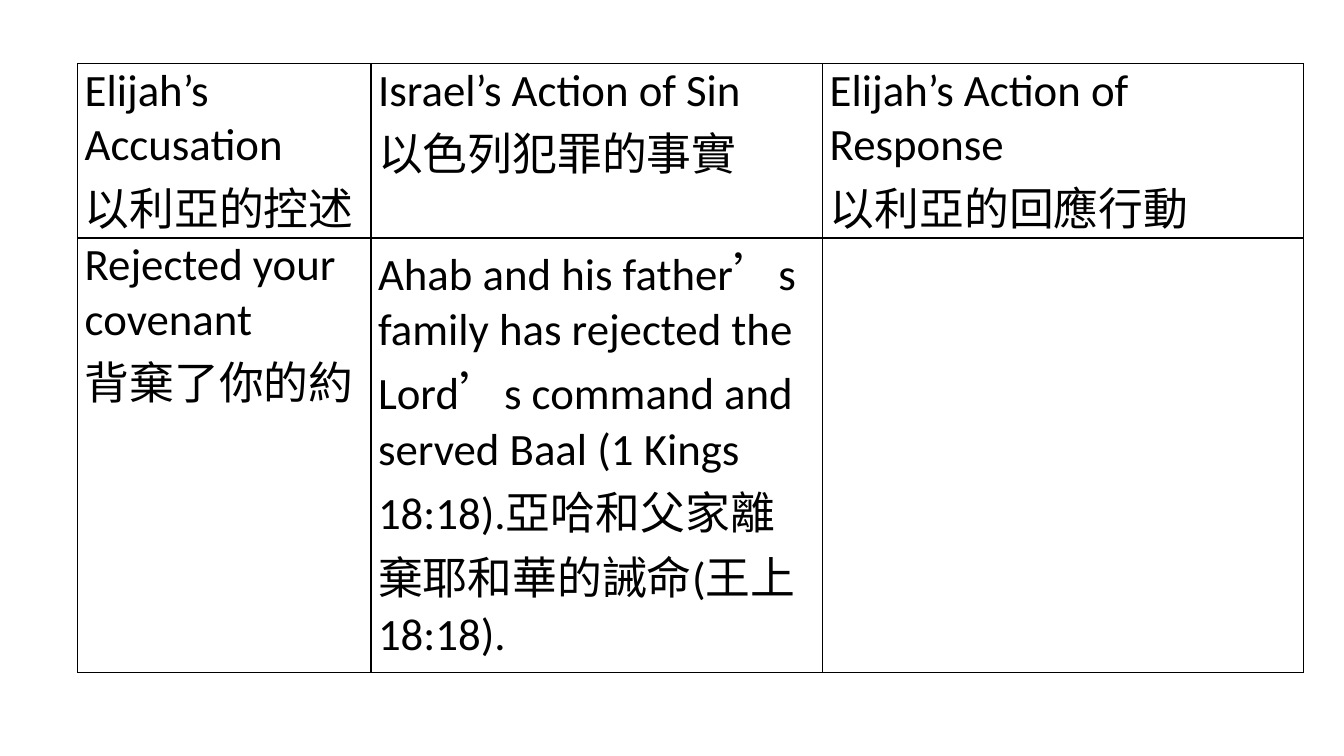
from lxml.etree import SubElement
from pptx import Presentation
from pptx.dml.color import RGBColor
from pptx.oxml.ns import qn
from pptx.util import Inches, Pt

COLORS = {"ink": "000000"}
COLUMN_WIDTHS = [2.91, 4.48, 4.77]
ROW_HEIGHTS = [1.72, 4.31]
FONT = {"name": "Calibri", "size": Pt(32), "bold": False}
MARGINS = {
    "margin_left": Inches(0.07),
    "margin_right": Inches(0.07),
    "margin_top": 0,
    "margin_bottom": 0,
}
ROWS = [
    [
        ["Elijah’s Accusation", "以利亞的控述"],
        ["Israel’s Action of Sin", "以色列犯罪的事實"],
        ["Elijah’s Action of Response", "以利亞的回應行動"],
    ],
    [
        ["Rejected your covenant", "背棄了你的約"],
        [
            "Ahab and his father’s family has rejected the Lord’s command "
            "and served Baal (1 Kings 18:18).亞哈和父家離棄耶和華的誡命(王上18:18)."
        ],
        [],
    ],
]


def set_format(target, values):
    for name, value in values.items():
        setattr(target, name, value)


def add_borders(cell):
    properties = cell._tc.get_or_add_tcPr()
    for position, side in enumerate(("a:lnL", "a:lnR", "a:lnT", "a:lnB")):
        line = properties.makeelement(qn(side), {"w": str(Pt(1))})
        fill = SubElement(line, qn("a:solidFill"))
        SubElement(fill, qn("a:srgbClr"), val=COLORS["ink"])
        properties.insert(position, line)


def fill_cell(cell, lines):
    set_format(cell, MARGINS)
    cell.fill.background()
    add_borders(cell)
    frame = cell.text_frame
    for index, line in enumerate(lines):
        para = frame.add_paragraph() if index else frame.paragraphs[0]
        span = para.add_run()
        span.text = line
        set_format(span.font, FONT)
        span.font.color.rgb = RGBColor.from_string(COLORS["ink"])


def add_accusation_table(page):
    table = page.shapes.add_table(
        len(ROWS), len(COLUMN_WIDTHS), Inches(0.77), Inches(0.63),
        Inches(sum(COLUMN_WIDTHS)), Inches(sum(ROW_HEIGHTS)),
    ).table
    set_format(table, {"first_row": False, "horz_banding": False})
    for column, width in zip(table.columns, COLUMN_WIDTHS):
        column.width = Inches(width)
    for row, height, texts in zip(table.rows, ROW_HEIGHTS, ROWS):
        row.height = Inches(height)
        for cell, lines in zip(row.cells, texts):
            fill_cell(cell, lines)


def main():
    deck = Presentation()
    set_format(deck, {"slide_width": Inches(13.33), "slide_height": Inches(7.5)})
    page = deck.slides.add_slide(deck.slide_layouts[6])
    add_accusation_table(page)
    deck.save("out.pptx")


if __name__ == "__main__":
    main()
